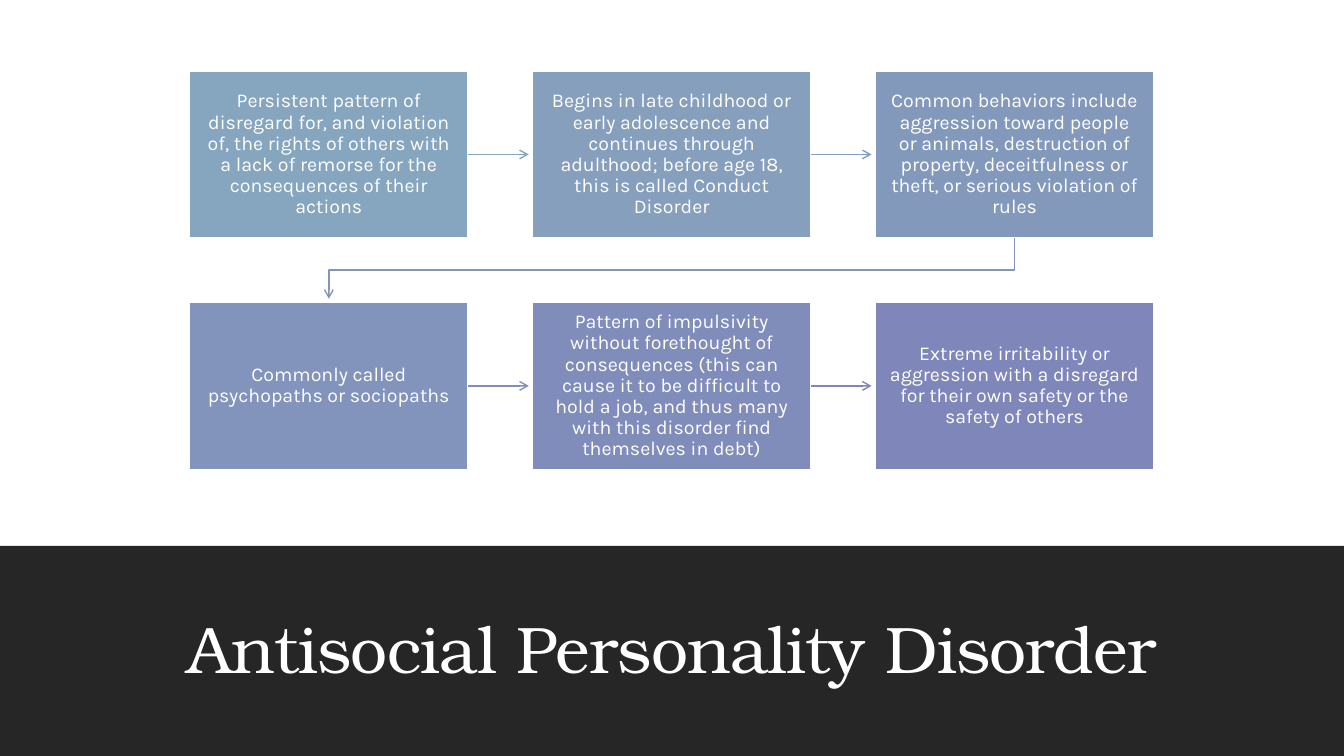
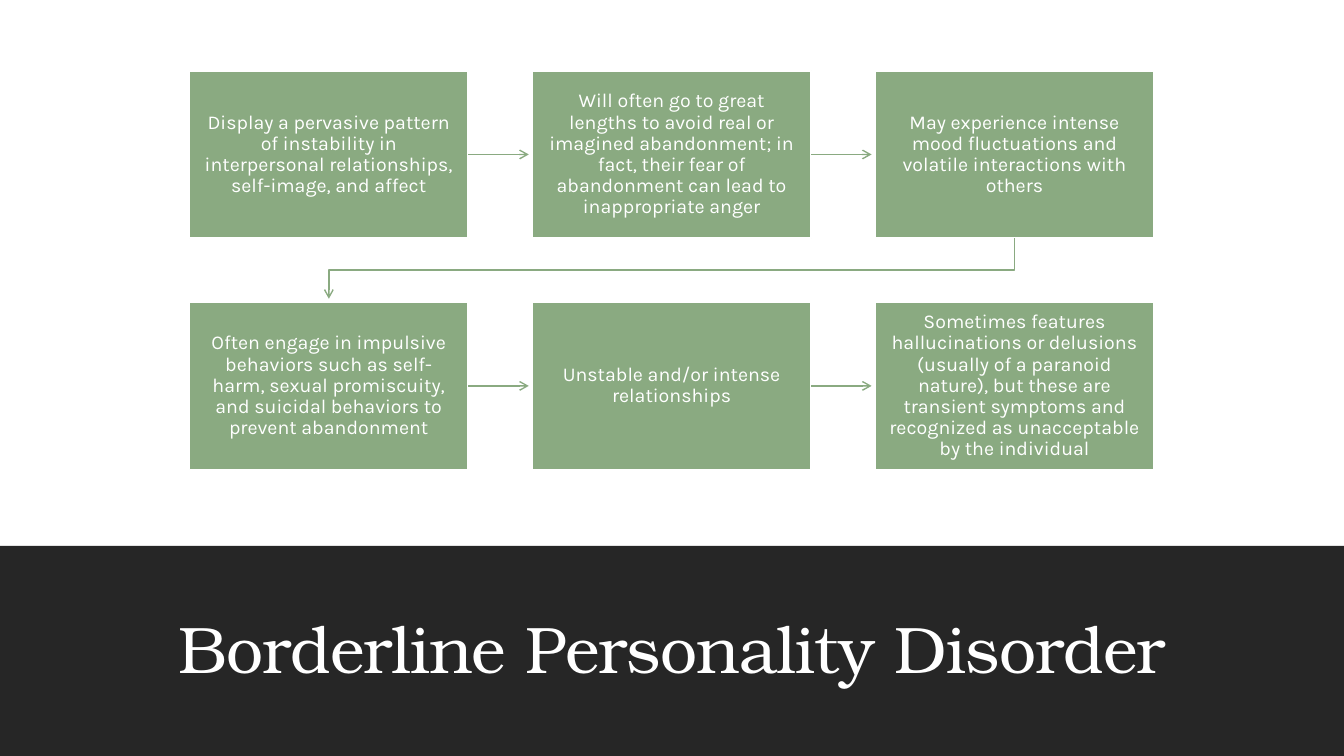
from pptx import Presentation
from pptx.dml.color import RGBColor
from pptx.enum.shapes import MSO_CONNECTOR, MSO_SHAPE
from pptx.enum.text import MSO_ANCHOR, PP_ALIGN
from pptx.oxml.ns import qn
from pptx.util import Pt
from lxml.etree import SubElement

WIDE, HIGH = 960, 540
WHITE, DARK = "FFFFFF", "262626"
HEAD, BODY = "TeX Gyre Bonum", "Karla"
BAND = (0, 390, WIDE, 150)
FLOW = (135.3, 50.6, 689, 284.8)
COLS, GAP_X, GAP_Y = 3, 45.7, 45.8
SHORT = 2.5  # space between an arrow tip and the next box

# Title, first and last box colour, box texts
PAGES = [
    ("Antisocial Personality Disorder", "86A5BE", "7F87BA", [
        "Persistent pattern of disregard for, and violation of, the rights "
        "of others with a lack of remorse for the consequences of their actions",
        "Begins in late childhood or early adolescence and continues through "
        "adulthood; before age 18, this is called Conduct Disorder",
        "Common behaviors include aggression toward people or animals, "
        "destruction of property, deceitfulness or theft, or serious "
        "violation of rules",
        "Commonly called psychopaths or sociopaths",
        "Pattern of impulsivity without forethought of consequences (this can "
        "cause it to be difficult to hold a job, and thus many with this "
        "disorder find themselves in debt)",
        "Extreme irritability or aggression with a disregard for their own "
        "safety or the safety of others",
    ]),
    ("Borderline Personality Disorder", "8AAA81", "8AAA81", [
        "Display a pervasive pattern of instability in interpersonal "
        "relationships, self-image, and affect",
        "Will often go to great lengths to avoid real or imagined abandonment; "
        "in fact, their fear of abandonment can lead to inappropriate anger",
        "May experience intense mood fluctuations and volatile interactions "
        "with others",
        "Often engage in impulsive behaviors such as self-harm, sexual "
        "promiscuity, and suicidal behaviors to prevent abandonment",
        "Unstable and/or intense relationships",
        "Sometimes features hallucinations or delusions (usually of a paranoid "
        "nature), but these are transient symptoms and recognized as "
        "unacceptable by the individual",
    ]),
]


def paint(fmt, tone):
    """Colour a fill or a line."""
    fill = getattr(fmt, "fill", fmt)
    fill.solid()
    fill.fore_color.rgb = RGBColor.from_string(tone)


def blend(first, last, part):
    """Mix two hex colours."""
    pairs = zip(bytes.fromhex(first), bytes.fromhex(last))
    return "".join(f"{round(a + (b - a) * part):02X}" for a, b in pairs)


def write(shape, text, font=BODY, size=14, tone=WHITE, pad=10,
          anchor=MSO_ANCHOR.MIDDLE, track=0):
    frame = shape.text_frame
    frame.word_wrap = True
    frame.vertical_anchor = anchor
    frame.margin_left = frame.margin_right = Pt(pad)
    frame.margin_top = frame.margin_bottom = Pt(pad)
    para = frame.paragraphs[0]
    para.alignment, para.line_spacing = PP_ALIGN.CENTER, 0.9
    run = para.add_run()
    run.text = text
    run.font.name, run.font.size = font, Pt(size)
    run.font.color.rgb = RGBColor.from_string(tone)
    if track:
        run.font._element.set("spc", str(round(track * 100)))


def block(slide, box, tone, edge=None):
    rect = slide.shapes.add_shape(MSO_SHAPE.RECTANGLE, *map(Pt, box))
    rect.shadow.inherit = False
    paint(rect.fill, tone)
    if edge:
        paint(rect.line, edge)
        rect.line.width = Pt(1.25)
    else:
        rect.line.fill.background()
    return rect


def tip(line, tone):
    """Style a line and give its end an open arrowhead."""
    paint(line.line, tone)
    line.line.width = Pt(1)
    prop = line._element.spPr
    SubElement(prop.find(qn("a:ln")), qn("a:tailEnd"), type="arrow")
    if prop.find(qn("a:effectLst")) is None:
        SubElement(prop, qn("a:effectLst"))


def across(slide, here, there, tone):
    """Arrow to the next box in the row."""
    mid = here.top + here.height // 2
    line = slide.shapes.add_connector(
        MSO_CONNECTOR.STRAIGHT, here.left + here.width, mid,
        there.left - Pt(SHORT), mid)
    line.begin_connect(here, 3)
    tip(line, tone)


def down(slide, here, there, tone):
    """Bent arrow to the first box of the next row."""
    start, end = (b.left + b.width // 2 for b in (here, there))
    top = here.top + here.height
    bend = (top + there.top) // 2
    pen = slide.shapes.build_freeform(start, top)
    pen.add_line_segments(
        [(start, bend), (end, bend), (end, there.top - Pt(SHORT))], close=False)
    line = pen.convert_to_shape()
    line.shadow.inherit = False
    line.fill.background()
    tip(line, tone)


def flow(slide, area, texts, first, last):
    """Grid of boxes read row by row, joined by arrows."""
    left, top, width, height = area
    rows = len(texts) // COLS
    wide = (width - GAP_X * (COLS - 1)) / COLS
    high = (height - GAP_Y * (rows - 1)) / rows
    boxes = []
    for i, text in enumerate(texts):
        row, col = divmod(i, COLS)
        spot = (left + col * (wide + GAP_X), top + row * (high + GAP_Y),
                wide, high)
        tone = blend(first, last, i / (len(texts) - 1))
        boxes.append(block(slide, spot, tone, edge=WHITE))
        write(boxes[-1], text)
    for i, (here, there) in enumerate(zip(boxes, boxes[1:])):
        join = across if here.top == there.top else down
        join(slide, here, there, blend(first, last, i / (len(boxes) - 2)))


def band(slide, area, title):
    """Dark band with the slide title."""
    left, top, width, _ = area
    block(slide, area, DARK)
    box = slide.shapes.add_textbox(
        Pt(left + 84), Pt(top + 23.3), Pt(width - 168), Pt(81.4))
    write(box, title, font=HEAD, size=47, pad=3.6,
          anchor=MSO_ANCHOR.BOTTOM, track=-0.5)


def main():
    deck = Presentation()
    deck.slide_width, deck.slide_height = Pt(WIDE), Pt(HIGH)
    for title, first, last, texts in PAGES:
        slide = deck.slides.add_slide(deck.slide_layouts[6])
        band(slide, BAND, title)
        flow(slide, FLOW, texts, first, last)
    deck.save("out.pptx")


if __name__ == "__main__":
    main()
